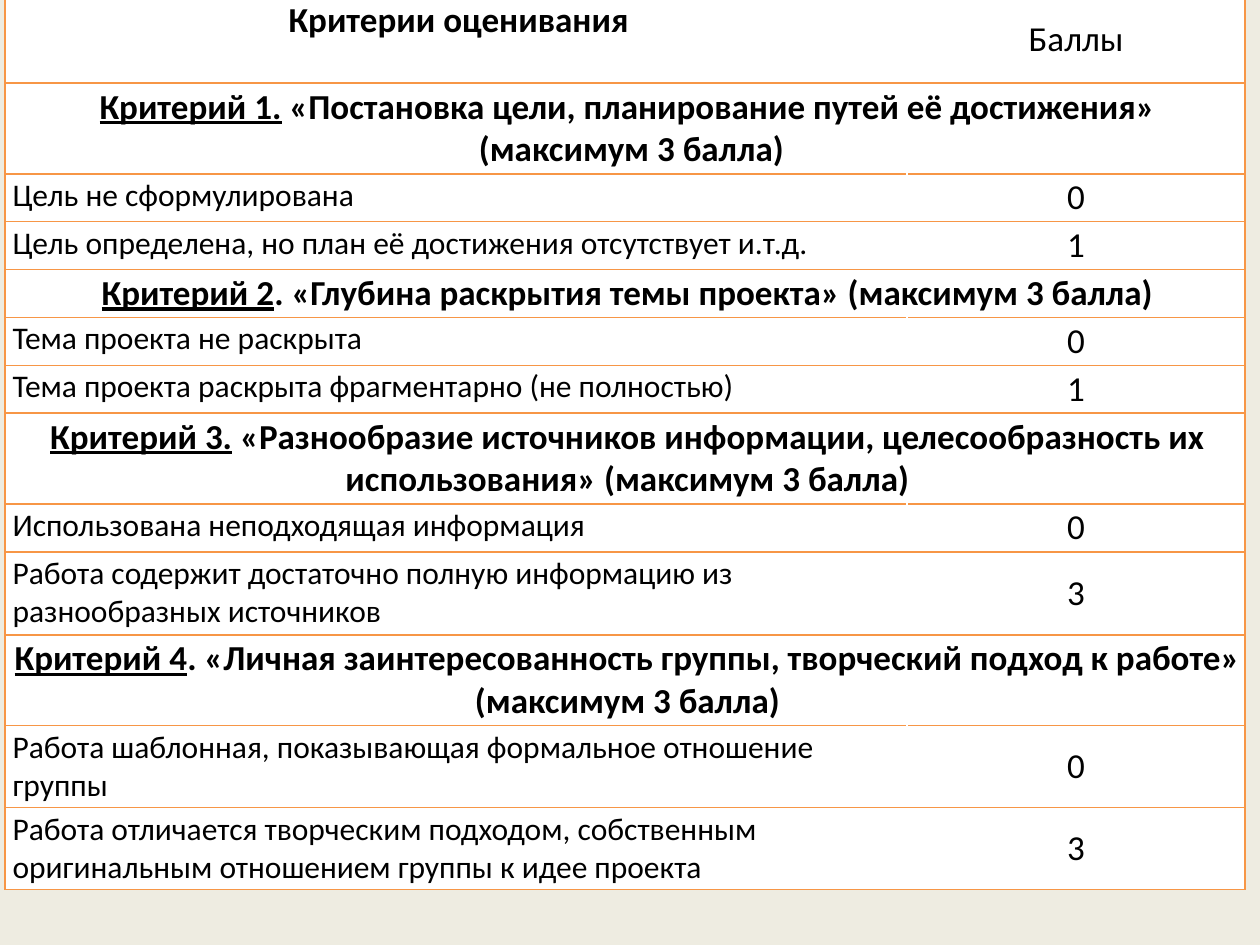
import pptx
import pptx.dml.color
import pptx.enum.text
import pptx.oxml
import pptx.oxml.ns
import pptx.util

Inches = pptx.util.Inches
ALIGN = pptx.enum.text.PP_ALIGN
ANCHOR = pptx.enum.text.MSO_ANCHOR

THEME = {
    "font": "Calibri",
    "background": "EEECE1",
    "cell": "FFFFFF",
    "text": "000000",
    "border": "F79646",
    "border_width": 1,
    "large": 20,
    "small": 18,
}

HEADER = ("Критерии оценивания", "Баллы")

# Each criterion: underlined label, title lines, row height,
# then its levels: description, score, row height.
CRITERIA = [
    ("Критерий 1.",
     [" «Постановка цели, планирование путей её достижения»", " (максимум 3 балла)"], 0.72,
     [("Цель не сформулирована", 0, 0.38),
      ("Цель определена, но план её достижения отсутствует и.т.д.", 1, 0.38)]),
    ("Критерий 2",
     [". «Глубина раскрытия темы проекта» (максимум 3 балла)"], 0.38,
     [("Тема проекта не раскрыта", 0, 0.38),
      ("Тема проекта раскрыта фрагментарно (не полностью)", 1, 0.38)]),
    ("Критерий 3.",
     [" «Разнообразие источников информации, целесообразность их использования» (максимум 3 балла)"], 0.72,
     [("Использована неподходящая информация", 0, 0.38),
      ("Работа содержит достаточно полную информацию из разнообразных источников", 3, 0.66)]),
    ("Критерий 4",
     [". «Личная заинтересованность группы, творческий подход к работе»", "(максимум 3 балла)"], 0.72,
     [("Работа шаблонная, показывающая формальное отношение группы", 0, 0.65),
      ("Работа отличается творческим подходом, собственным оригинальным отношением группы к идее проекта", 3, 0.65)]),
]

TABLE_LEFT, TABLE_TOP = 0.04, -0.03
COLUMN_WIDTHS = (7.16, 2.68)
HEADER_HEIGHT = 0.69
CELL_MARGIN = 0.02
TEXT_INDENT = 0.04


def color(name):
    return pptx.dml.color.RGBColor.from_string(THEME[name])


def set_attributes(target, values):
    for name, value in values.items():
        setattr(target, name, value)


def add_borders(cell, edges):
    """Draw the given edges, a string of letters in the order L, R, T, B."""
    properties = cell._tc.get_or_add_tcPr()
    width = pptx.util.Pt(THEME["border_width"])
    for edge in edges:
        properties.append(pptx.oxml.parse_xml(
            f'<a:ln{edge} {pptx.oxml.ns.nsdecls("a")} w="{width}"><a:solidFill>'
            f'<a:srgbClr val="{THEME["border"]}"/></a:solidFill></a:ln{edge}>'))


def style_cell(cell, edges, anchor):
    margin = Inches(CELL_MARGIN)
    set_attributes(cell, {
        "margin_left": margin, "margin_right": margin,
        "margin_top": margin, "margin_bottom": margin,
        "vertical_anchor": anchor,
    })
    add_borders(cell, edges)
    cell.fill.solid()
    cell.fill.fore_color.rgb = color("cell")


def write_cell(cell, lines, alignment, size, indent=0):
    """Write lines of runs, one paragraph a line; a run is text, bold, underline."""
    frame = cell.text_frame
    for number, runs in enumerate(lines):
        paragraph = frame.add_paragraph() if number else frame.paragraphs[0]
        paragraph.alignment = alignment
        paragraph._p.get_or_add_pPr().set("marL", str(Inches(indent)))
        for text, bold, underline in runs:
            run = paragraph.add_run()
            run.text = text
            set_attributes(run.font, {
                "name": THEME["font"], "size": pptx.util.Pt(THEME[size]),
                "bold": bold, "underline": underline,
            })
            run.font.color.rgb = color("text")


def fill_score(cell, text):
    style_cell(cell, "RTB", ANCHOR.MIDDLE)
    write_cell(cell, [[(text, False, False)]], ALIGN.CENTER, "large")


def fill_header(row):
    title, score = HEADER
    style_cell(row.cells[0], "LTB", ANCHOR.TOP)
    write_cell(row.cells[0], [[(title, True, False)]], ALIGN.CENTER, "large", TEXT_INDENT)
    fill_score(row.cells[1], score)


def fill_criterion(row, label, title_lines):
    cell, covered = row.cells
    cell.merge(covered)
    style_cell(cell, "LRTB", ANCHOR.TOP)
    style_cell(covered, "RTB", ANCHOR.TOP)
    lines = [[(line, True, False)] for line in title_lines]
    lines[0].insert(0, (label, True, True))
    write_cell(cell, lines, ALIGN.CENTER, "large", TEXT_INDENT)


def fill_level(row, description, score):
    style_cell(row.cells[0], "LTB", ANCHOR.TOP)
    write_cell(row.cells[0], [[(description, False, False)]], ALIGN.LEFT, "small", TEXT_INDENT)
    fill_score(row.cells[1], str(score))


def plan_rows():
    """List every row as its height, fill function and arguments."""
    rows = [(HEADER_HEIGHT, fill_header, ())]
    for label, title_lines, height, levels in CRITERIA:
        rows.append((height, fill_criterion, (label, title_lines)))
        rows += [(level_height, fill_level, (description, score))
                 for description, score, level_height in levels]
    return rows


def add_criteria_table(slide):
    rows = plan_rows()
    table = slide.shapes.add_table(
        len(rows), len(COLUMN_WIDTHS), Inches(TABLE_LEFT), Inches(TABLE_TOP),
        Inches(sum(COLUMN_WIDTHS)), Inches(sum(height for height, _, _ in rows))).table
    set_attributes(table, {"first_row": False, "horz_banding": False})
    for column, width in zip(table.columns, COLUMN_WIDTHS):
        column.width = Inches(width)
    for row, (height, fill_row, values) in zip(table.rows, rows):
        row.height = Inches(height)
        fill_row(row, *values)


def main():
    presentation = pptx.Presentation()
    set_attributes(presentation, {"slide_width": Inches(10), "slide_height": Inches(7.5)})
    slide = presentation.slides.add_slide(presentation.slide_layouts[6])
    slide.background.fill.solid()
    slide.background.fill.fore_color.rgb = color("background")
    add_criteria_table(slide)
    presentation.save("out.pptx")


if __name__ == "__main__":
    main()
